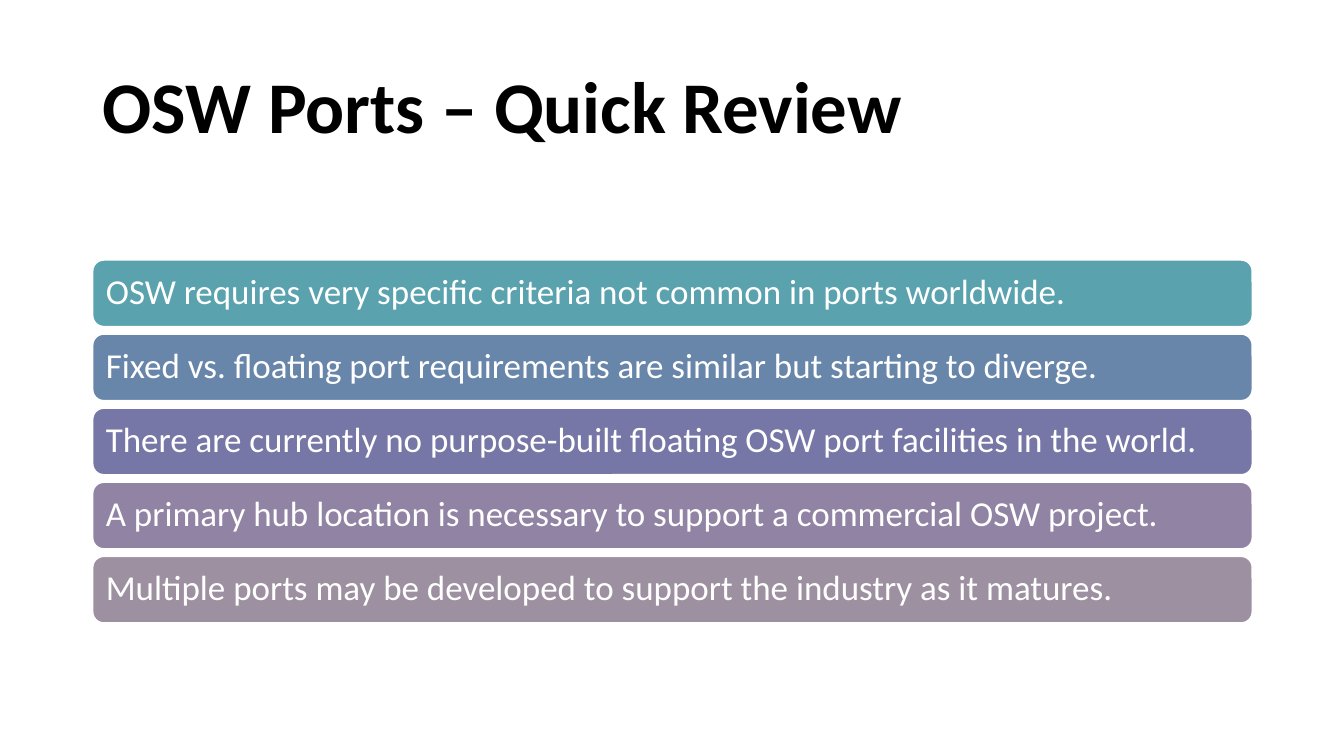
from pptx import Presentation
from pptx.dml.color import RGBColor
from pptx.enum.shapes import MSO_SHAPE
from pptx.enum.text import MSO_ANCHOR, MSO_AUTO_SIZE, PP_ALIGN
from pptx.util import Inches, Pt

LEFT, WIDTH = 0.92, 11.5
BAR_TOP, BAR_HEIGHT, BAR_PITCH = 2.58, 0.66, 0.735

BARS = [
    ("OSW requires very specific criteria not common in ports worldwide.", "5AA2AE"),
    ("Fixed vs. floating port requirements are similar but starting to diverge.", "6885AA"),
    ("There are currently no purpose-built floating OSW port facilities in the world.", "7677A6"),
    ("A primary hub location is necessary to support a commercial OSW project.", "9083A3"),
    ("Multiple ports may be developed to support the industry as it matures.", "9D90A0"),
]


def rgb(color):
    return RGBColor.from_string(color)


def write(sp, text, size, color, bold=False):
    tf = sp.text_frame
    tf.text = text
    tf.word_wrap = True
    tf.auto_size = MSO_AUTO_SIZE.NONE
    tf.vertical_anchor = MSO_ANCHOR.MIDDLE
    p = tf.paragraphs[0]
    p.alignment = PP_ALIGN.LEFT
    p.line_spacing = 0.9
    p.font.name = "Calibri"
    p.font.size = Pt(size)
    p.font.bold = bold
    p.font.color.rgb = rgb(color)
    return tf


prs = Presentation()
prs.slide_width, prs.slide_height = Inches(13.33), Inches(7.5)
s = prs.slides.add_slide(prs.slide_layouts[5])

# Title
title = s.shapes.title
title.left, title.top = Inches(LEFT), Inches(0.34)
title.width, title.height = Inches(WIDTH), Inches(1.51)
write(title, "OSW Ports – Quick Review", 52, "000000", bold=True)

# Review points, one bar each
for i, (text, color) in enumerate(BARS):
    bar = s.shapes.add_shape(
        MSO_SHAPE.ROUNDED_RECTANGLE,
        Inches(LEFT), Inches(BAR_TOP + i * BAR_PITCH), Inches(WIDTH), Inches(BAR_HEIGHT))
    bar.shadow.inherit = False
    bar.fill.solid()
    bar.fill.fore_color.rgb = rgb(color)
    bar.line.color.rgb = rgb("FFFFFF")
    bar.line.width = Pt(1)
    tf = write(bar, text, 25, "FFFFFF")
    tf.margin_left = tf.margin_right = tf.margin_top = tf.margin_bottom = Inches(0.1)

prs.save("out.pptx")
